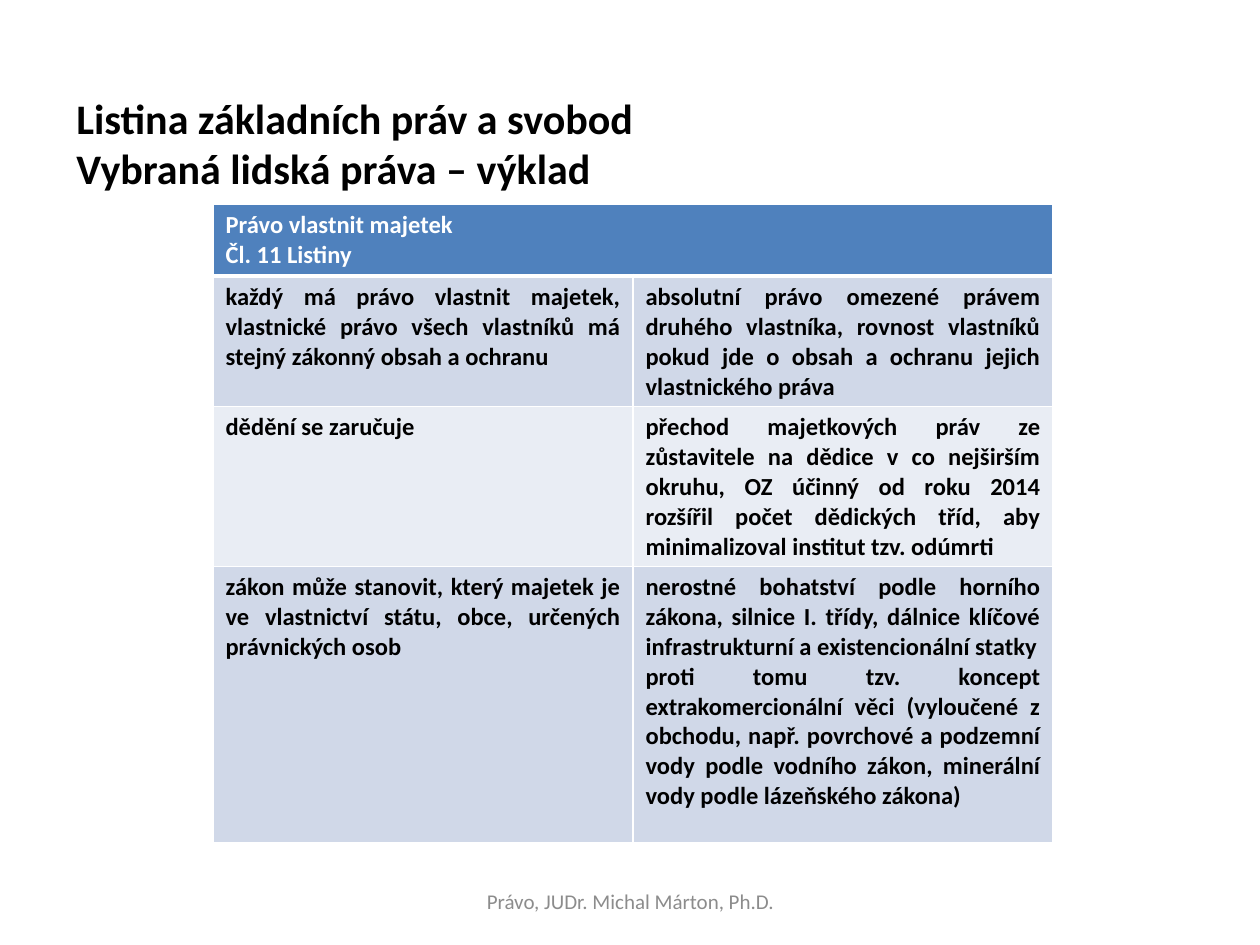
from lxml import etree
from pptx import Presentation
from pptx import util as u
from pptx.dml.color import RGBColor
from pptx.enum import text
from pptx.oxml.ns import qn

PX = 914400 / 126
HUES = {"ink": "000000", "white": "FFFFFF", "grey": "8C8C8C",
        "head": "4F81BD", "dark": "D0D8E8", "light": "E9EDF4"}
ALIGN = text.PP_ALIGN


def px(n):
    return u.Emu(round(n * PX))


def hue(name):
    return RGBColor.from_string(HUES[name])


class Page:
    font = "Calibri"

    def __init__(self, slide):
        self.slide = slide

    def fill_text(self, frame, lines, size, color, bold=True, align=ALIGN.LEFT):
        for i, line in enumerate(lines):
            para = frame.add_paragraph() if i else frame.paragraphs[0]
            para.text = line
            para.alignment = align
            font = para.font
            font.name, font.size, font.bold = self.font, u.Pt(size), bold
            font.color.rgb = hue(color)

    def label(self, box, lines, size, color, anchor=text.MSO_ANCHOR.TOP, **style):
        frame = self.slide.shapes.add_textbox(*map(px, box)).text_frame
        frame.word_wrap = True
        frame.vertical_anchor = anchor
        self.fill_text(frame, lines, size, color, **style)

    def border(self, cell, base):
        props = cell._tc.get_or_add_tcPr()
        for i, side in enumerate("LRTB"):
            width = base if side == "B" else 1
            line = etree.Element(qn(f"a:ln{side}"), w=str(u.Pt(width)))
            fill = etree.SubElement(line, qn("a:solidFill"))
            etree.SubElement(fill, qn("a:srgbClr"), val=HUES["white"])
            props.insert(i, line)

    def cell(self, cell, lines, fill, color="ink", align=ALIGN.JUSTIFY, base=1):
        cell.fill.solid()
        cell.fill.fore_color.rgb = hue(fill)
        self.border(cell, base)
        self.fill_text(cell.text_frame, lines, 14, color, align=align)

    def table(self, left, top, width, highs, head, rows):
        shape = self.slide.shapes.add_table(
            len(highs), 2, px(left), px(top), px(width), px(sum(highs)))
        grid = shape.table
        for col in grid.columns:
            col.width = px(width / 2)
        for row, high in zip(grid.rows, highs):
            row.height = px(high)
        # Header across both columns
        grid.cell(0, 0).merge(grid.cell(0, 1))
        for c, lines in enumerate((head, [])):
            self.cell(grid.cell(0, c), lines, "head", "white", ALIGN.LEFT, 3)
        # Banded body
        for r, row in enumerate(rows, 1):
            for c, lines in enumerate(row):
                self.cell(grid.cell(r, c), lines, "dark" if r % 2 else "light")


RIGHTS = [
    (["každý má právo vlastnit majetek, vlastnické právo všech vlastníků má "
      "stejný zákonný obsah a ochranu"],
     ["absolutní právo omezené právem druhého vlastníka, rovnost vlastníků "
      "pokud jde o obsah a ochranu jejich vlastnického práva"]),
    (["dědění se zaručuje "],
     ["přechod majetkových práv ze zůstavitele na dědice v co nejširším "
      "okruhu, OZ účinný od roku 2014 rozšířil počet dědických tříd, aby "
      "minimalizoval institut tzv. odúmrti"]),
    (["zákon může stanovit, který majetek je ve vlastnictví státu, obce, "
      "určených právnických osob"],
     ["nerostné bohatství podle horního zákona, silnice I. třídy, dálnice "
      "klíčové infrastrukturní a existencionální statky",
      "proti tomu tzv. koncept extrakomercionální věci (vyloučené z obchodu, "
      "např. povrchové a podzemní vody podle vodního zákon, minerální vody "
      "podle lázeňského zákona)"]),
]


def main():
    deck = Presentation()
    deck.slide_width, deck.slide_height = px(1260), px(945)
    page = Page(deck.slides.add_slide(deck.slide_layouts[6]))

    # Footer
    page.label((431, 876, 399, 50), ["Právo, JUDr. Michal Márton, Ph.D."], 12,
               "grey", text.MSO_ANCHOR.MIDDLE, bold=False, align=ALIGN.CENTER)
    # Title
    page.label((64, 86, 1131, 305), ["Listina základních práv a svobod",
                                     "Vybraná lidská práva – výklad"], 24, "ink")
    # Table of rights
    page.table(213, 204, 840, (72, 130, 160, 277),
               ["Právo vlastnit majetek", "Čl. 11 Listiny"], RIGHTS)

    deck.save("out.pptx")


if __name__ == "__main__":
    main()
